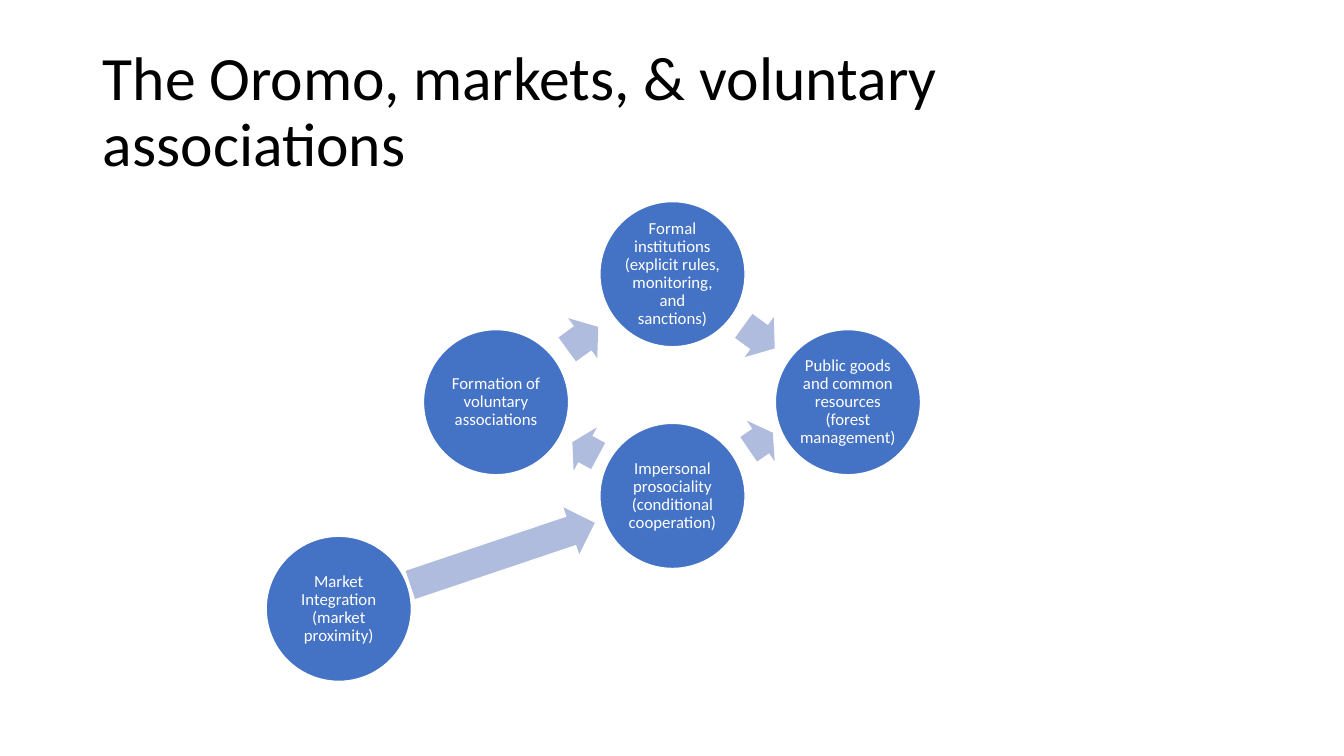
"""Build a slide showing how markets and voluntary associations lead to public goods."""
from pptx import Presentation
from pptx.dml.color import RGBColor
from pptx.enum import shapes, text
from pptx.util import Inches, Pt

TITLE = "The Oromo, markets, & voluntary associations"
COLORS = {"title": "000000", "circle": "4472C4", "arrow": "B0BCDE", "white": "FFFFFF"}
FONT = "Calibri"
DIAMETER = 1.44
ARROW_HEIGHT = 0.49

CIRCLES = [
    (5.95, 2.0, "Formal institutions (explicit rules, monitoring, and sanctions)"),
    (7.69, 3.27, "Public goods and common resources (forest management)"),
    (2.64, 5.32, "Market Integration (market proximity)"),
    (5.95, 4.2, "Impersonal prosociality (conditional cooperation)"),
    (4.2, 3.27, "Formation of voluntary associations"),
]
ARROWS = [
    (7.34, 3.1, 0.38, 36),
    (4.02, 5.25, 1.93, 341.4),
    (5.66, 4.21, 0.29, 208.2),
    (5.59, 3.11, 0.38, 324),
    (7.4, 4.13, 0.29, 325.6),
]


def rgb(name):
    return RGBColor.from_string(COLORS[name])


def write(sp, words, size, color, align, inset):
    tf = sp.text_frame
    tf.text = words
    frame = {"word_wrap": True, "auto_size": text.MSO_AUTO_SIZE.NONE,
             "vertical_anchor": text.MSO_ANCHOR.MIDDLE}
    for side, margin in zip(("left", "top", "right", "bottom"), inset):
        frame["margin_" + side] = Inches(margin)
    for key, value in frame.items():
        setattr(tf, key, value)
    p = tf.paragraphs[0]
    p.alignment, p.line_spacing = align, 0.9
    font = p.runs[0].font
    for key, value in {"name": FONT, "size": Pt(size)}.items():
        setattr(font, key, value)
    font.color.rgb = rgb(color)


def add_filled(s, kind, box, color):
    sp = s.shapes.add_shape(kind, *map(Inches, box))
    sp.shadow.inherit = False
    sp.fill.solid()
    sp.fill.fore_color.rgb = rgb(color)
    return sp


def main():
    prs = Presentation()
    prs.slide_width, prs.slide_height = Inches(13.33), Inches(7.5)
    s = prs.slides.add_slide(prs.slide_layouts[5])

    title = s.shapes.title
    for key, value in zip(("left", "top", "width", "height"), (0.92, 0.4, 11.5, 1.45)):
        setattr(title, key, Inches(value))
    write(title, TITLE, 44, "title", text.PP_ALIGN.LEFT, (0.1, 0.05, 0.1, 0.05))

    for left, top, words in CIRCLES:
        sp = add_filled(s, shapes.MSO_SHAPE.OVAL, (left, top, DIAMETER, DIAMETER), "circle")
        sp.line.color.rgb = rgb("white")
        sp.line.width = Pt(1)
        write(sp, words, 12, "white", text.PP_ALIGN.CENTER, (0.02,) * 4)

    for left, top, length, angle in ARROWS:
        sp = add_filled(s, shapes.MSO_SHAPE.RIGHT_ARROW, (left, top, length, ARROW_HEIGHT), "arrow")
        sp.line.fill.background()
        sp.adjustments[0], sp.adjustments[1] = 0.6, 0.5
        sp.rotation = angle

    prs.save("out.pptx")


if __name__ == "__main__":
    main()
